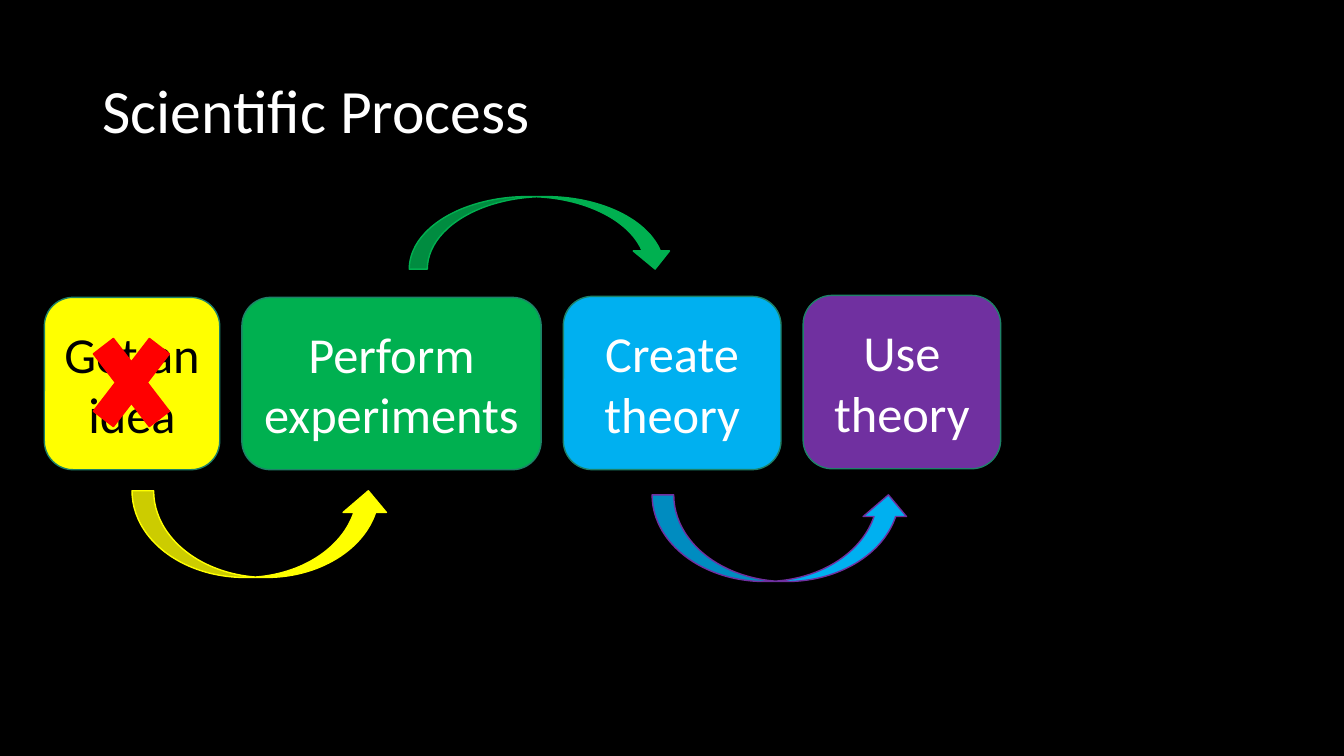
"""Builds the Scientific Process slide: four steps joined by curved arrows."""
from pptx import Presentation
from pptx.dml.color import RGBColor
from pptx.enum.shapes import MSO_SHAPE
from pptx.enum.text import MSO_ANCHOR, PP_ALIGN
from pptx.util import Pt

ROUND = MSO_SHAPE.ROUNDED_RECTANGLE
UP = MSO_SHAPE.CURVED_UP_ARROW
DOWN = MSO_SHAPE.CURVED_DOWN_ARROW
CROSS = MSO_SHAPE.MATH_MULTIPLY
MIDDLE = MSO_ANCHOR.MIDDLE
CENTER = PP_ALIGN.CENTER

BLACK = RGBColor(0x00, 0x00, 0x00)
WHITE = RGBColor(0xFF, 0xFF, 0xFF)
YELLOW = RGBColor(0xFF, 0xFF, 0x00)
GREEN = RGBColor(0x00, 0xB0, 0x50)
BLUE = RGBColor(0x00, 0xB0, 0xF0)
PURPLE = RGBColor(0x70, 0x30, 0xA0)
RED = RGBColor(0xFF, 0x00, 0x00)
TEAL = RGBColor(0x1E, 0x81, 0x68)

FONT = "Calibri"
LEFT = 31.7
GAP = 15.8
STEPS = [
    (212.4, 125.3, 123.1, YELLOW, BLACK, ["Get an idea"]),
    (212.4, 213.8, 123.1, GREEN, WHITE, ["Perform", "experiments"]),
    (211.7, 155.5, 123.8, BLUE, WHITE, ["Create theory"]),
    (211, 141.1, 123.8, PURPLE, WHITE, ["Use theory"]),
]
MARKS = [
    (UP, (94.3, 350.6, 184.3, 61.9), YELLOW, YELLOW),
    (DOWN, (292.3, 140.4, 188.6, 51.8), GREEN, GREEN),
    (CROSS, (55.4, 223.2, 77, 100.1), RED, RED),
    (UP, (465.8, 353.5, 184.3, 61.9), BLUE, PURPLE),
]


def add_run(para, text, size, color):
    """Add one styled run to a paragraph."""
    run = para.add_run()
    run.text = text
    run.font.name = FONT
    run.font.size = Pt(size)
    run.font.color.rgb = color


def set_title(slide, text):
    """Place and fill the title placeholder."""
    title = slide.shapes.title
    title.left, title.top = Pt(66), Pt(28.8)
    title.width, title.height = Pt(828), Pt(104.4)
    frame = title.text_frame
    frame.word_wrap = True
    frame.vertical_anchor = MIDDLE
    para = frame.paragraphs[0]
    para.alignment = PP_ALIGN.LEFT
    para.line_spacing = 0.9
    add_run(para, text, 44, WHITE)


def add_mark(slide, kind, box, fill, line):
    """Add a filled and outlined preset shape."""
    shape = slide.shapes.add_shape(kind, *map(Pt, box))
    shape.shadow.inherit = False
    shape.fill.solid()
    shape.fill.fore_color.rgb = fill
    shape.line.color.rgb = line
    shape.line.width = Pt(1)
    return shape


def add_step(slide, box, fill, color, lines):
    """Add a rounded box with centred text."""
    frame = add_mark(slide, ROUND, box, fill, TEAL).text_frame
    frame.word_wrap = True
    frame.vertical_anchor = MIDDLE
    for i, text in enumerate(lines):
        para = frame.add_paragraph() if i else frame.paragraphs[0]
        para.alignment = CENTER
        add_run(para, text, 36, color)


def main():
    """Build and save the slide."""
    deck = Presentation()
    deck.slide_width, deck.slide_height = Pt(960), Pt(540)
    slide = deck.slides.add_slide(deck.slide_layouts[5])
    slide.background.fill.solid()
    slide.background.fill.fore_color.rgb = BLACK
    set_title(slide, "Scientific Process")
    left = LEFT
    for top, width, height, fill, color, lines in STEPS:
        add_step(slide, (left, top, width, height), fill, color, lines)
        left += width + GAP
    for mark in MARKS:
        add_mark(slide, *mark)
    deck.save("out.pptx")


if __name__ == "__main__":
    main()
